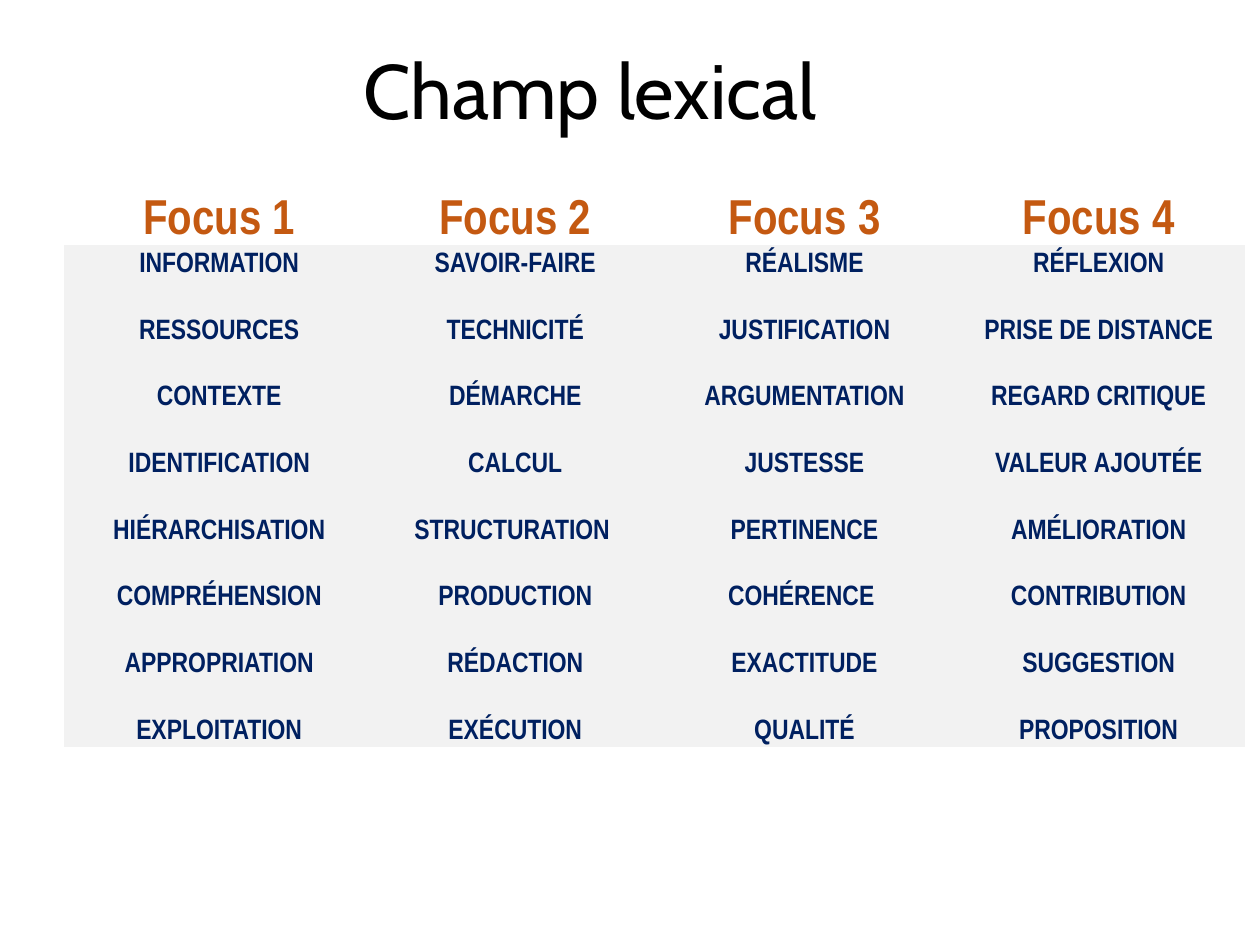
from pptx import Presentation
from pptx.dml.color import RGBColor as RGB
from pptx.enum.text import MSO_ANCHOR as Anchor, PP_ALIGN as Align
from pptx.util import Inches, Pt

# Content: one heading and its words per column
TITLE = "Champ lexical"
FOCUS = {
    "Focus 1": ["information", "ressources", "contexte", "identification",
                "hiérarchisation", "compréhension", "appropriation", "exploitation"],
    "Focus 2": ["savoir-faire", "technicité", "démarche", "calcul",
                "structuration ", "production", "rédaction", "exécution"],
    "Focus 3": ["réalisme", "justification", "argumentation", "justesse",
                "pertinence", "cohérence ", "exactitude", "qualité"],
    "Focus 4": ["réflexion", "prise de distance", "regard critique", "valeur ajoutée",
                "amélioration", "contribution", "suggestion", "proposition"],
}
WIDTHS = [2.46, 2.24, 2.35, 2.32]
HEIGHTS = [0.24, 3.38]

THEME = {
    "title": {"name": "Cabin", "size": 44, "color": "000000", "bold": False},
    "head": {"name": "Arial Narrow", "size": 28, "color": "C45911", "bold": True},
    "word": {"name": "Arial Narrow", "size": 20, "color": "002060", "bold": True},
    "fill": "F2F2F2",
}


def style(para, look, caps=False):
    para.alignment = Align.CENTER
    for run in para.runs:
        font = run.font
        font.name, font.size, font.bold = look["name"], Pt(look["size"]), look["bold"]
        font.color.rgb = RGB.from_string(look["color"])
        if caps:
            run._r.get_or_add_rPr().set("cap", "small")


def fill_cell(cell, lines, look, caps=False, gaps=(0, 0), fill=None):
    cell.margin_left = cell.margin_right = Inches(0.05)
    cell.margin_top = cell.margin_bottom = 0
    if fill:
        cell.fill.solid()
        cell.fill.fore_color.rgb = RGB.from_string(fill)
    else:
        cell.fill.background()
    cell.text_frame.text = "\n".join(lines)
    for i, para in enumerate(cell.text_frame.paragraphs):
        para.line_spacing = 1.07
        para.space_before = Pt(gaps[0] if i else 0)
        para.space_after = Pt(gaps[1])
        style(para, look, caps)


deck = Presentation()
deck.slide_width, deck.slide_height = Inches(10), Inches(7.5)
slide = deck.slides.add_slide(deck.slide_layouts[5])

# Title
title = slide.shapes.title
title.left, title.top = Inches(1.14), Inches(0.28)
title.width, title.height = Inches(7.09), Inches(0.84)
title.text_frame.text = TITLE
title.text_frame.vertical_anchor = Anchor.MIDDLE
style(title.text_frame.paragraphs[0], THEME["title"])

# Table of word fields
table = slide.shapes.add_table(2, len(FOCUS), Inches(0.51), Inches(1.55),
                               Inches(sum(WIDTHS)), Inches(sum(HEIGHTS))).table
table.first_row = table.horz_banding = False
for row, high in zip(table.rows, HEIGHTS):
    row.height = Inches(high)
for col, (head, words) in enumerate(FOCUS.items()):
    table.columns[col].width = Inches(WIDTHS[col])
    fill_cell(table.cell(0, col), [head], THEME["head"])
    fill_cell(table.cell(1, col), words, THEME["word"], True, (12, 6), THEME["fill"])

# Plain table style: no grid lines
table._tbl.tblPr.find("{*}tableStyleId").text = "{2D5ABB26-0587-4C30-8999-92F81FD0307C}"

deck.save("out.pptx")
